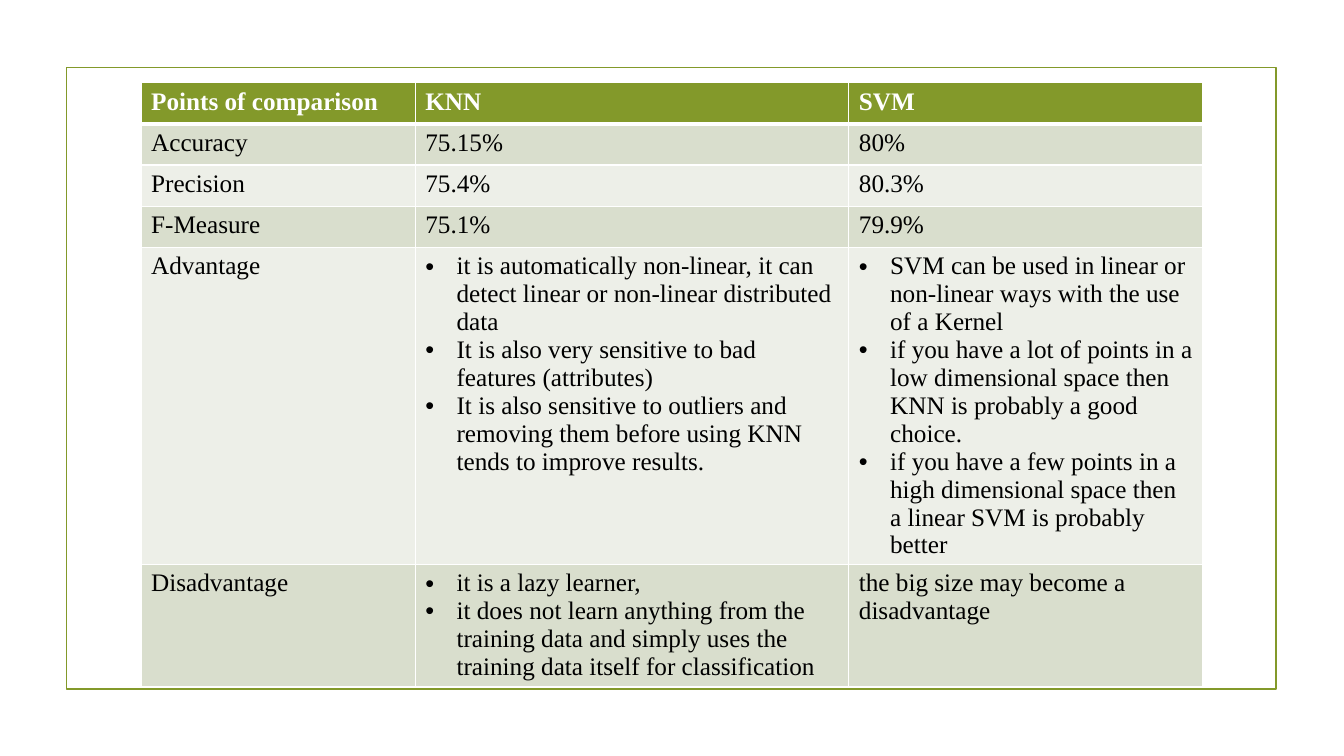
import dataclasses
from typing import Any

import lxml.etree
import pptx
import pptx.dml.color
import pptx.enum.shapes
import pptx.oxml.ns
import pptx.util

SLIDE_WIDTH, SLIDE_HEIGHT = pptx.util.Inches(13.33), pptx.util.Inches(7.5)
FONT = "Times New Roman"
GREEN, WHITE, BLACK = "83992A", "FFFFFF", "000000"
BANDS = ("EDEFE8", "D9DECD")
BULLET_INDENT = pptx.util.Inches(0.31)

# Shares of the slide's size, in percent
FRAME = (4.95, 8.93, 90, 82.27)
TABLE_LEFT, TABLE_TOP = 10.5, 10.93
COLUMN_WIDTHS = (20.4, 32.26, 26.33)


@dataclasses.dataclass(frozen=True)
class ComparisonRow:
    label: str
    knn: str | list[str]
    svm: str | list[str]
    height: float = 5.45


# A list of strings becomes a bulleted list
ROWS = [
    ComparisonRow("Points of comparison", "KNN", "SVM"),
    ComparisonRow("Accuracy", "75.15%", "80%"),
    ComparisonRow("Precision", "75.4%", "80.3%"),
    ComparisonRow("F-Measure", "75.1%", "79.9%"),
    ComparisonRow(
        "Advantage",
        [
            "it is automatically non-linear, it can detect linear or non-linear distributed data",
            "It is also very sensitive to bad features (attributes)",
            "It is also sensitive to outliers and removing them before using KNN tends to improve results.",
        ],
        [
            "SVM can be used in linear or non-linear ways with the use of a Kernel",
            "if you have a lot of points in a low dimensional space then KNN is probably a good choice.",
            "if you have a few points in a high dimensional space then a linear SVM is probably better",
        ],
        41.9,
    ),
    ComparisonRow(
        "Disadvantage",
        [
            "it is a lazy learner,",
            "it does not learn anything from the training data and simply uses the training data itself for classification",
        ],
        "the big size may become a disadvantage",
        16.1,
    ),
]


def across(percent: float) -> int:
    return round(SLIDE_WIDTH * percent / 100)


def down(percent: float) -> int:
    return round(SLIDE_HEIGHT * percent / 100)


def color(value: str) -> pptx.dml.color.RGBColor:
    return pptx.dml.color.RGBColor.from_string(value)


def add_element(parent: Any, tag: str, **attributes: str) -> Any:
    return lxml.etree.SubElement(parent, pptx.oxml.ns.qn(tag), **attributes)


def write_text(paragraph: Any, text: str, *, ink: str = BLACK, size: float = 18,
               bold: bool = False, bullet: bool = False) -> None:
    if bullet:
        properties = paragraph._p.get_or_add_pPr()
        properties.set("marL", str(BULLET_INDENT))
        properties.set("indent", str(-BULLET_INDENT))
        add_element(properties, "a:buFont", typeface="Arial")
        add_element(properties, "a:buChar", char="•")
    run = paragraph.add_run()
    run.text = text
    run.font.name = FONT
    run.font.size = pptx.util.Pt(size)
    run.font.bold = bold
    run.font.color.rgb = color(ink)


def set_borders(cell: Any, top: float, bottom: float) -> None:
    properties = cell._tc.get_or_add_tcPr()
    for side, width in {"L": 1, "R": 1, "T": top, "B": bottom}.items():
        line = add_element(properties, f"a:ln{side}", w=str(pptx.util.Pt(width)))
        add_element(add_element(line, "a:solidFill"), "a:srgbClr", val=WHITE)


def fill_cell(cell: Any, content: str | list[str], row_index: int) -> None:
    header = row_index == 0
    set_borders(cell, top=3 if row_index == 1 else 1, bottom=3 if header else 1)
    cell.fill.solid()
    cell.fill.fore_color.rgb = color(GREEN if header else BANDS[row_index % 2])
    bullet = isinstance(content, list)
    for index, text in enumerate(content if bullet else [content]):
        frame = cell.text_frame
        paragraph = frame.add_paragraph() if index else frame.paragraphs[0]
        write_text(paragraph, text, ink=WHITE if header else BLACK, bold=header, bullet=bullet)


def add_frame(slide: Any) -> None:
    left, top, width, height = FRAME
    frame = slide.shapes.add_shape(
        pptx.enum.shapes.MSO_SHAPE.RECTANGLE,
        across(left), down(top), across(width), down(height))
    frame.shadow.inherit = False
    frame.fill.background()
    frame.line.color.rgb = color(GREEN)
    frame.line.width = pptx.util.Pt(1.25)


def add_comparison(slide: Any) -> None:
    table = slide.shapes.add_table(
        len(ROWS), len(COLUMN_WIDTHS), across(TABLE_LEFT), down(TABLE_TOP),
        across(sum(COLUMN_WIDTHS)), down(sum(row.height for row in ROWS))).table
    for column, width in zip(table.columns, COLUMN_WIDTHS):
        column.width = across(width)
    for row_index, row in enumerate(ROWS):
        table.rows[row_index].height = down(row.height)
        for column_index, content in enumerate((row.label, row.knn, row.svm)):
            fill_cell(table.cell(row_index, column_index), content, row_index)


def main() -> None:
    presentation = pptx.Presentation()
    presentation.slide_width, presentation.slide_height = SLIDE_WIDTH, SLIDE_HEIGHT
    slide = presentation.slides.add_slide(presentation.slide_layouts[6])
    add_frame(slide)
    add_comparison(slide)
    presentation.save("out.pptx")


if __name__ == "__main__":
    main()
